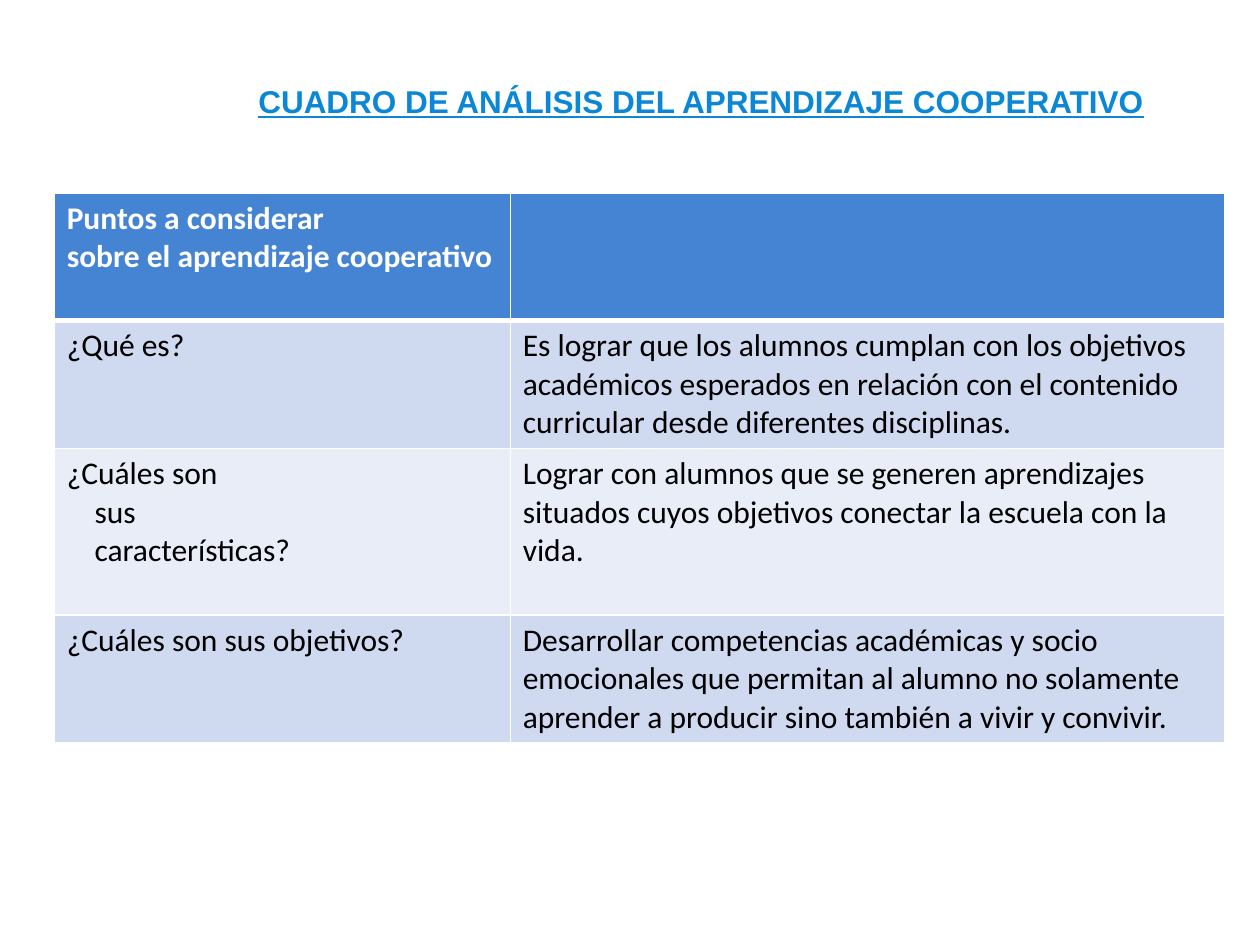
from dataclasses import dataclass

from lxml import etree
from pptx import Presentation
from pptx import util as u
from pptx.dml.color import RGBColor
from pptx.enum import text
from pptx.oxml import ns


@dataclass(frozen=True)
class Theme:
    title_color: str = "0B87D6"
    header_fill: str = "4584D3"
    band_fills: tuple = ("CFD9EF", "E9EDF7")
    header_text: str = "FFFFFF"
    body_text: str = "000000"
    border: str = "FFFFFF"
    title_font: str = "Arial"
    table_font: str = "Calibri"
    size: int = 18
    thin: int = 1
    thick: int = 3


THEME = Theme()
WIDTH, HEIGHT = 10, 7.5
TITLE_BOX = (0.195, 0.08, 0.737, 0.053)
TABLE_ORIGIN = (0.043, 0.204)
COLUMN_SHARES = (0.362, 0.567)
LINE_HEIGHT = 0.305
CELL_PADDING = 0.1
ROW_LINES = (3, 3, 4, 3)
INDENT = 0.22

TITLE = "CUADRO DE ANÁLISIS DEL APRENDIZAJE COOPERATIVO"
ROWS = [
    ([("Puntos a considerar", 0), ("sobre el aprendizaje cooperativo", 0)], []),
    ([("¿Qué es?", 0)],
     [("Es lograr que los alumnos cumplan con los objetivos académicos esperados "
       "en relación con el contenido curricular desde diferentes disciplinas.", 0)]),
    ([("¿Cuáles son", 0), ("sus", 1), ("características?", 1)],
     [("Lograr con alumnos que se generen aprendizajes situados cuyos objetivos "
       "conectar la escuela con la vida.", 0)]),
    ([("¿Cuáles son sus objetivos?", 0)],
     [("Desarrollar competencias académicas y socio emocionales que permitan al "
       "alumno no solamente aprender a producir sino también a vivir y convivir.", 0)]),
]


def across(share):
    return u.Inches(WIDTH * share)


def down(share):
    return u.Inches(HEIGHT * share)


def add_run(paragraph, words, font_name, color, bold=False, underline=False):
    run = paragraph.add_run()
    run.text = words
    run.font.name = font_name
    run.font.size = u.Pt(THEME.size)
    run.font.bold = bold
    run.font.underline = underline
    run.font.color.rgb = RGBColor.from_string(color)


def set_borders(cell, top, bottom):
    properties = cell._tc.get_or_add_tcPr()
    widths = {"lnL": THEME.thin, "lnR": THEME.thin, "lnT": top, "lnB": bottom}
    for position, (side, width) in enumerate(widths.items()):
        line = etree.Element(ns.qn(f"a:{side}"), w=str(u.Pt(width)))
        fill = etree.SubElement(line, ns.qn("a:solidFill"))
        etree.SubElement(fill, ns.qn("a:srgbClr"), val=THEME.border)
        properties.insert(position, line)


def fill_cell(cell, paragraphs, row_index):
    is_header = row_index == 0
    fill = THEME.header_fill if is_header else THEME.band_fills[(row_index - 1) % 2]
    color = THEME.header_text if is_header else THEME.body_text
    cell.fill.solid()
    cell.fill.fore_color.rgb = RGBColor.from_string(fill)
    set_borders(cell,
                top=THEME.thick if row_index == 1 else THEME.thin,
                bottom=THEME.thick if is_header else THEME.thin)
    frame = cell.text_frame
    for index, (words, level) in enumerate(paragraphs):
        paragraph = frame.add_paragraph() if index else frame.paragraphs[0]
        if level:
            paragraph._p.get_or_add_pPr().set("marL", str(u.Inches(INDENT * level)))
        add_run(paragraph, words, THEME.table_font, color, bold=is_header)


def add_title(slide):
    title = slide.shapes.title
    left, top, width, height = TITLE_BOX
    title.left, title.top = across(left), down(top)
    title.width, title.height = across(width), down(height)
    frame = title.text_frame
    frame.word_wrap = False
    frame.auto_size = text.MSO_AUTO_SIZE.NONE
    frame.vertical_anchor = text.MSO_ANCHOR.MIDDLE
    paragraph = frame.paragraphs[0]
    paragraph.alignment = text.PP_ALIGN.LEFT
    add_run(paragraph, TITLE, THEME.title_font, THEME.title_color,
            bold=True, underline=True)


def add_analysis_table(slide):
    heights = [u.Inches(lines * LINE_HEIGHT + CELL_PADDING) for lines in ROW_LINES]
    left, top = TABLE_ORIGIN
    table = slide.shapes.add_table(
        len(ROWS), len(COLUMN_SHARES), across(left), down(top),
        across(sum(COLUMN_SHARES)), sum(heights)).table
    for column, share in zip(table.columns, COLUMN_SHARES):
        column.width = across(share)
    for row_index, (row, height, contents) in enumerate(zip(table.rows, heights, ROWS)):
        row.height = height
        for cell, paragraphs in zip(row.cells, contents):
            fill_cell(cell, paragraphs, row_index)


def main():
    presentation = Presentation()
    presentation.slide_width = u.Inches(WIDTH)
    presentation.slide_height = u.Inches(HEIGHT)
    slide = presentation.slides.add_slide(presentation.slide_layouts[5])
    add_analysis_table(slide)
    add_title(slide)
    presentation.save("out.pptx")


if __name__ == "__main__":
    main()
